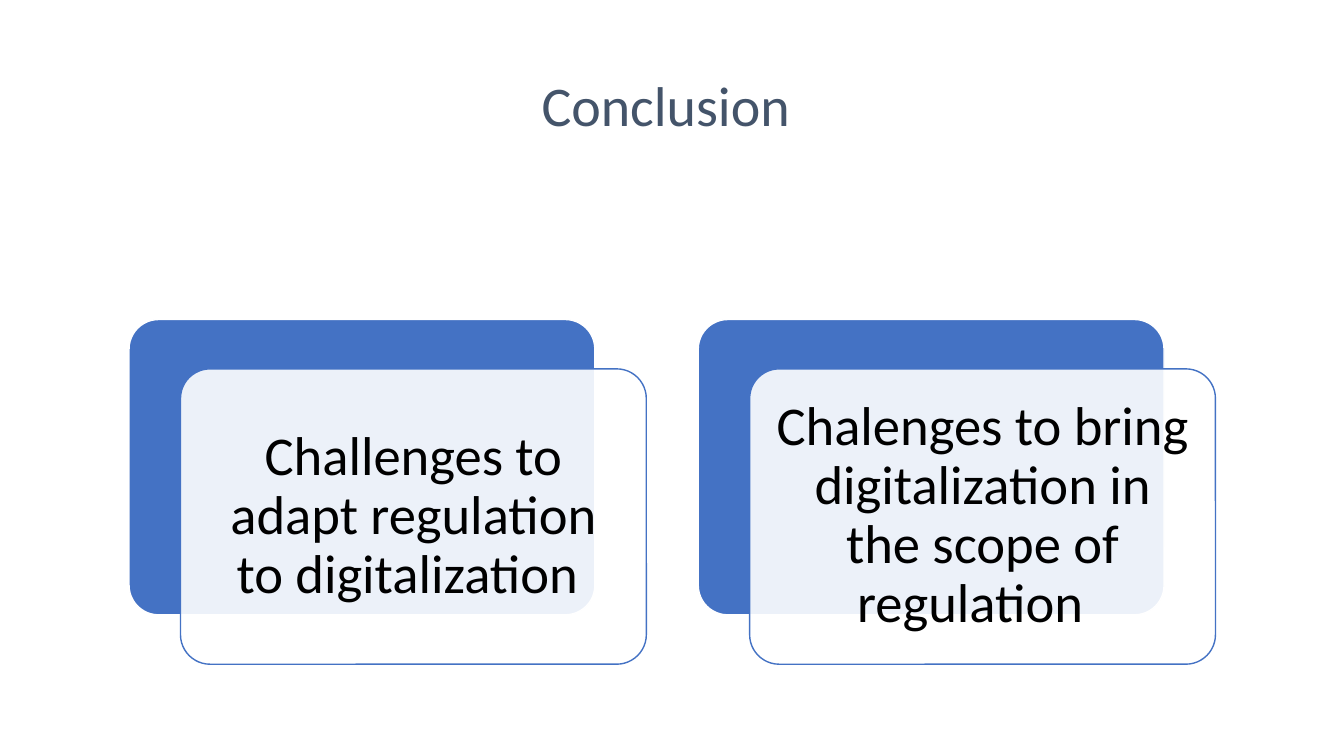
"""Build the conclusion slide with two layered challenge cards."""
from lxml.etree import SubElement
from pptx import Presentation
from pptx.dml.color import RGBColor
from pptx.enum.shapes import MSO_SHAPE
from pptx.enum.text import MSO_ANCHOR, PP_ALIGN
from pptx.oxml.ns import qn
from pptx.util import Inches, Pt

COLORS = {"title": "44546A", "blue": "4472C4", "white": "FFFFFF", "text": "000000"}


def write(shape, text, size, color, inset):
    frame = shape.text_frame
    form = {
        "word_wrap": True,
        "vertical_anchor": MSO_ANCHOR.MIDDLE,
        "margin_left": Inches(inset),
        "margin_right": Inches(inset),
        "margin_top": Inches(inset),
        "margin_bottom": Inches(inset),
    }
    for name, value in form.items():
        setattr(frame, name, value)
    para = frame.paragraphs[0]
    para.alignment = PP_ALIGN.CENTER
    para.line_spacing = 0.9
    run = para.add_run()
    run.text = text
    for name, value in {"name": "Calibri", "size": Pt(size)}.items():
        setattr(run.font, name, value)
    run.font.color.rgb = RGBColor.from_string(COLORS[color])


def panel(left, top, fill, line):
    shape = slide.shapes.add_shape(
        MSO_SHAPE.ROUNDED_RECTANGLE, Inches(left), Inches(top), Inches(4.62), Inches(2.93)
    )
    shape.adjustments[0] = 0.1
    shape.shadow.inherit = False
    shape.fill.solid()
    shape.fill.fore_color.rgb = RGBColor.from_string(COLORS[fill])
    shape.line.color.rgb = RGBColor.from_string(COLORS[line])
    shape.line.width = Pt(1)
    return shape


deck = Presentation()
deck.slide_width = Inches(13.33)
deck.slide_height = Inches(7.5)
slide = deck.slides.add_slide(deck.slide_layouts[6])

title = slide.shapes.add_textbox(Inches(1.29), Inches(0.35), Inches(10.75), Inches(1.45))
write(title, "Conclusion ", 40, "title", 0.1)

points = [
    "Challenges to adapt regulation to digitalization ",
    "Chalenges to bring digitalization in the scope of regulation  ",
]
for index, point in enumerate(points):
    left = 1.28 + index * 5.645
    panel(left, 3.17, "blue", "white")
    card = panel(left + 0.51, 3.66, "white", "blue")
    tint = card.fill._xPr.find(qn("a:solidFill"))[0]
    SubElement(tint, qn("a:alpha")).set("val", "90000")
    write(card, point, 39, "text", 0.16)

deck.save("out.pptx")
